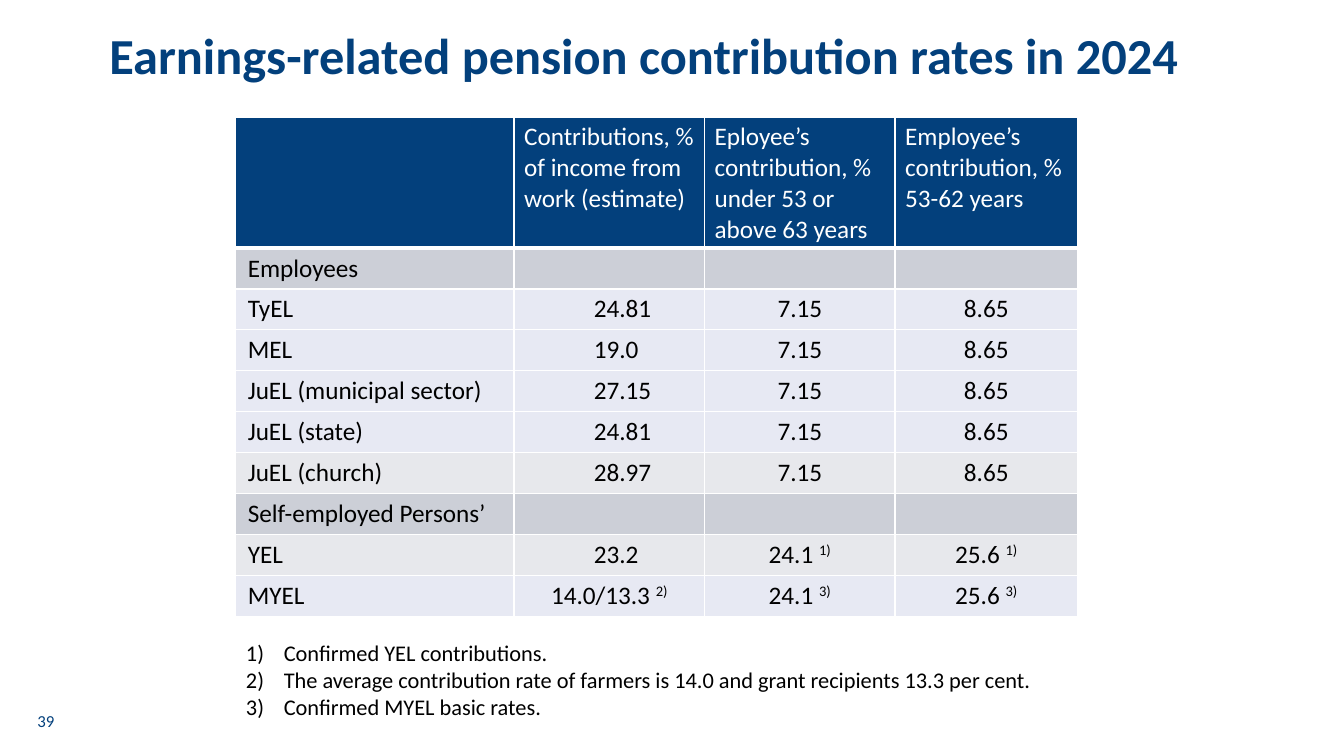
"""Build the slide on earnings-related pension contribution rates."""
from dataclasses import dataclass

from lxml import etree
from pptx import Presentation
from pptx import util as u
from pptx.dml.color import RGBColor
from pptx.enum import text as t
from pptx.oxml.ns import qn

NAVY, WHITE, BLACK = "03407C", "FFFFFF", "000000"
GROUP, PALE, GREY = "CCCFD7", "E7E9F3", "E7E8EC"
HEAD = (
    "",
    "Contributions, % of income from work (estimate)",
    "Eployee’s contribution, % under 53 or above 63 years",
    "Employee’s contribution, % 53-62 years",
)
NOTES = (
    "Confirmed YEL contributions.",
    "The average contribution rate of farmers is 14.0 and grant recipients 13.3 per cent.",
    "Confirmed MYEL basic rates.",
)
WIDTHS = (198.7, 136.1, 136.1, 130.3)
HEAD_HIGH, ROW_HIGH = 93, 29.25


@dataclass(frozen=True)
class Rate:
    label: str
    fill: str
    total: str = ""
    young: str = ""
    older: str = ""


RATES = (
    Rate("Employees", GROUP),
    Rate("TyEL", PALE, "24.81", "7.15", "8.65"),
    Rate("MEL", PALE, "19.0", "7.15", "8.65"),
    Rate("JuEL (municipal sector)", PALE, "27.15", "7.15", "8.65"),
    Rate("JuEL (state)", PALE, "24.81", "7.15", "8.65"),
    Rate("JuEL (church)", GREY, "28.97", "7.15", "8.65"),
    Rate("Self-employed Persons’", GROUP),
    Rate("YEL", GREY, "23.2", "24.1 ^1)", "25.6 ^1)"),
    Rate("MYEL", PALE, "14.0/13.3 ^2)", "24.1 ^3)", "25.6 ^3)"),
)


def tint(target, shade: str) -> None:
    target.rgb = RGBColor.from_string(shade)


def style(para, size: float, shade: str, bold: bool = False) -> None:
    for run in para.runs:
        run.font.name = "Calibri"
        run.font.size = u.Pt(size)
        run.font.bold = bold
        tint(run.font.color, shade)


def place(shape, left: float, top: float, width: float, height: float) -> None:
    shape.left, shape.top = u.Pt(left), u.Pt(top)
    shape.width, shape.height = u.Pt(width), u.Pt(height)


def edge(cell, side: str, width: float) -> None:
    line = etree.Element(qn(f"a:{side}"), w=str(u.Pt(width)))
    fill = etree.SubElement(line, qn("a:solidFill"))
    etree.SubElement(fill, qn("a:srgbClr"), val=WHITE)
    props = cell._tc.get_or_add_tcPr()
    props.insert(len(props.findall("*")) - 1, line)


def fill_cell(cell, words: str, fill: str, shade: str, base: float = 1) -> None:
    cell.fill.solid()
    tint(cell.fill.fore_color, fill)
    for side in ("lnL", "lnR", "lnT"):
        edge(cell, side, 1)
    edge(cell, "lnB", base)
    para = cell.text_frame.paragraphs[0]
    main, mark, note = words.partition("^")
    para.text = main
    if mark:
        small = para.add_run()
        small.text = note
        small.font._element.set("baseline", "30000")
    style(para, 18, shade)


def add_rates(slide) -> None:
    frame = slide.shapes.add_table(
        len(RATES) + 1, len(HEAD), u.Pt(168.5), u.Pt(83.5),
        u.Pt(sum(WIDTHS)), u.Pt(HEAD_HIGH + ROW_HIGH * len(RATES)))
    table = frame.table
    table.horz_banding = False
    for column, width in zip(table.columns, WIDTHS):
        column.width = u.Pt(width)
    for row in table.rows:
        row.height = u.Pt(ROW_HIGH)
    table.rows[0].height = u.Pt(HEAD_HIGH)
    for col, words in enumerate(HEAD):
        fill_cell(table.cell(0, col), words, NAVY, WHITE, 3)
    for index, rate in enumerate(RATES, 1):
        values = (rate.label, rate.total, rate.young, rate.older)
        for col, words in enumerate(values):
            cell = table.cell(index, col)
            fill_cell(cell, words, rate.fill, BLACK)
            if col == 0:
                cell.margin_left = u.Pt(8.5)
            elif col == 1 and "^" not in words:
                cell.margin_left, cell.margin_right = u.Pt(57), u.Pt(20)
            else:
                cell.text_frame.paragraphs[0].alignment = t.PP_ALIGN.CENTER


def add_title(shape) -> None:
    place(shape, 43.2, 18.7, 833.8, 58.3)
    frame = shape.text_frame
    frame.text = "Earnings-related pension contribution rates in 2024"
    frame.vertical_anchor = t.MSO_ANCHOR.TOP
    para = frame.paragraphs[0]
    para.alignment = t.PP_ALIGN.CENTER
    para.line_spacing = 0.9
    style(para, 36, NAVY, True)


def add_notes(shape) -> None:
    place(shape, 168.5, 452.9, 623.5, 65.5)
    frame = shape.text_frame
    frame.text = "\n".join(NOTES)
    frame.auto_size = t.MSO_AUTO_SIZE.SHAPE_TO_FIT_TEXT
    for para in frame.paragraphs:
        props = para._p.get_or_add_pPr()
        props.set("marL", str(u.Pt(27)))
        props.set("indent", str(u.Pt(-27)))
        etree.SubElement(props, qn("a:buFont"), typeface="+mj-lt")
        etree.SubElement(props, qn("a:buAutoNum"), type="arabicParenR")
        para.space_before = u.Pt(0)
        style(para, 16, BLACK)


def add_number(slide) -> None:
    box = slide.shapes.add_textbox(u.Pt(14.4), u.Pt(500.4), u.Pt(36.7), u.Pt(28.8))
    frame = box.text_frame
    frame.word_wrap = True
    frame.vertical_anchor = t.MSO_ANCHOR.MIDDLE
    frame.text = "39"
    frame.paragraphs[0].alignment = t.PP_ALIGN.CENTER
    style(frame.paragraphs[0], 12, NAVY)


def main() -> None:
    deck = Presentation()
    deck.slide_width, deck.slide_height = u.Pt(960), u.Pt(540)
    slide = deck.slides.add_slide(deck.slide_layouts[1])
    add_title(slide.shapes.title)
    add_notes(slide.placeholders[1])
    add_rates(slide)
    add_number(slide)
    deck.save("out.pptx")


if __name__ == "__main__":
    main()
